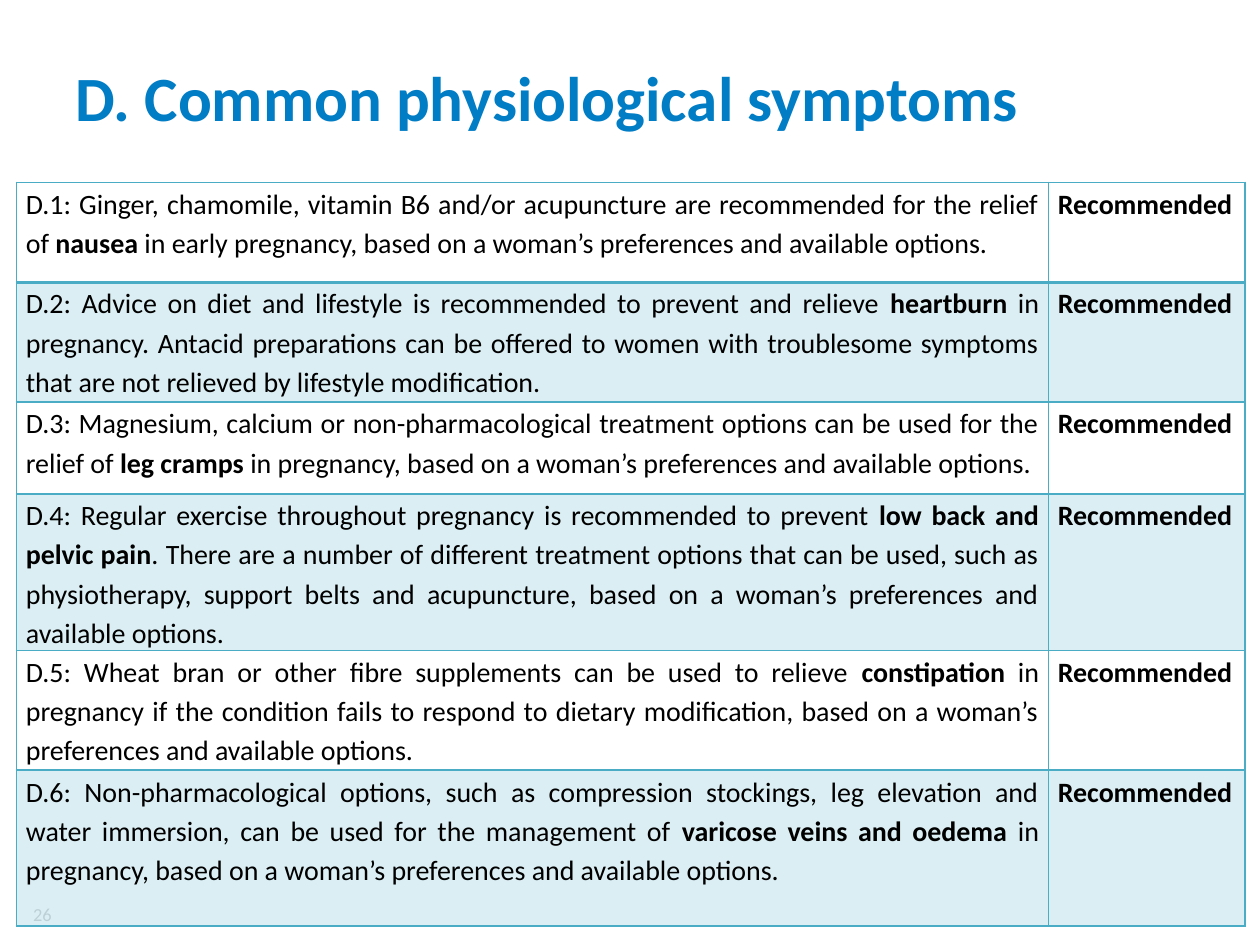
from pptx import Presentation
from pptx.dml.color import RGBColor
from pptx.enum.text import MSO_ANCHOR, PP_ALIGN
from pptx.oxml.ns import qn
from pptx.util import Pt
from lxml.etree import SubElement

TITLE = "D. Common physiological symptoms"
PAGE = "26"
TEAL = "4BACC6"
GRADE = "Recommended"
COLS = (589.7, 112.3)
ROWS = [
    (57, "D.1: Ginger, chamomile, vitamin B6 and/or acupuncture are recommended for the relief of ",
     "nausea", " in early pregnancy, based on a woman’s preferences and available options. "),
    (68.5, "D.2: Advice on diet and lifestyle is recommended to prevent and relieve ",
     "heartburn ", "in pregnancy. Antacid preparations can be offered to women with troublesome "
     "symptoms that are not relieved by lifestyle modification."),
    (52.5, "D.3: Magnesium, calcium or non-pharmacological treatment options can be used for the relief of ",
     "leg cramps", " in pregnancy, based on a woman’s preferences and available options."),
    (89.5, "D.4: Regular exercise throughout pregnancy is recommended to prevent ",
     "low back and pelvic pain", ". There are a number of different treatment options that can be used, "
     "such as physiotherapy, support belts and acupuncture, based on a woman’s preferences and available options."),
    (68.5, "D.5: Wheat bran or other fibre supplements can be used to relieve ",
     "constipation", " in pregnancy if the condition fails to respond to dietary modification, "
     "based on a woman’s preferences and available options."),
    (89, "D.6: Non-pharmacological options, such as compression stockings, leg elevation and water immersion, "
     "can be used for the management of ",
     "varicose veins and oedema", " in pregnancy, based on a woman’s preferences and available options."),
]


def paint(hue):
    return RGBColor.from_string(hue)


def style(para, size, hue, align):
    para.alignment = align
    font = para.font
    font.name, font.size = "Calibri", Pt(size)
    font.color.rgb = paint(hue)


def label(slide, text, place, size, hue, align):
    frame = slide.shapes.add_textbox(*map(Pt, place)).text_frame
    frame.word_wrap = True
    frame.vertical_anchor = MSO_ANCHOR.MIDDLE
    para = frame.paragraphs[0]
    para.text = text
    style(para, size, hue, align)
    return para


def border(cell, widths):
    props = cell._tc.get_or_add_tcPr()
    for side, width in widths.items():
        line = SubElement(props, qn("a:" + side), w=str(Pt(width)))
        fill = SubElement(line, qn("a:solidFill"))
        SubElement(fill, qn("a:srgbClr"), val=TEAL)


def shade(cell, band):
    if not band:
        cell.fill.background()
        return
    cell.fill.solid()
    cell.fill.fore_color.rgb = paint(TEAL)
    color = cell._tc.tcPr.find(".//" + qn("a:solidFill") + "[last()]/" + qn("a:srgbClr"))
    SubElement(color, qn("a:alpha"), val="20000")


def write(cell, parts):
    cell.margin_left = cell.margin_right = Pt(5.4)
    cell.margin_top = cell.margin_bottom = 0
    para = cell.text_frame.paragraphs[0]
    para.line_spacing = 1.15
    style(para, 16, "000000", PP_ALIGN.JUSTIFY)
    for text, bold in parts:
        run = para.add_run()
        run.text = text
        run.font.bold = bold


def main():
    deck = Presentation()
    deck.slide_width, deck.slide_height = Pt(720), Pt(540)
    slide = deck.slides.add_slide(deck.slide_layouts[6])
    label(slide, PAGE, (8.6, 514, 28, 17.3), 10.5, "D9D9D9", PP_ALIGN.RIGHT)
    head = label(slide, TITLE, (36, 21.6, 648, 67), 36, "007DC5", PP_ALIGN.LEFT)
    head.font.bold = True

    high = sum(row[0] for row in ROWS)
    table = slide.shapes.add_table(
        len(ROWS), len(COLS), Pt(9.4), Pt(104.2), Pt(sum(COLS)), Pt(high)).table
    table.first_row = table.horz_banding = False
    for col, width in zip(table.columns, COLS):
        col.width = Pt(width)
    for i, (tall, start, key, end) in enumerate(ROWS):
        table.rows[i].height = Pt(tall)
        texts = [[(start, False), (key, True), (end, False)], [(GRADE, True)]]
        edges = {"lnL": 1, "lnR": 1, "lnT": 2 if i == 1 else 1, "lnB": 2 if i == 0 else 1}
        for cell, parts in zip(table.rows[i].cells, texts):
            write(cell, parts)
            shade(cell, i % 2)
            tint = list(cell._tc.tcPr)
            border(cell, edges)
            cell._tc.tcPr.extend(tint)
    deck.save("out.pptx")


if __name__ == "__main__":
    main()
